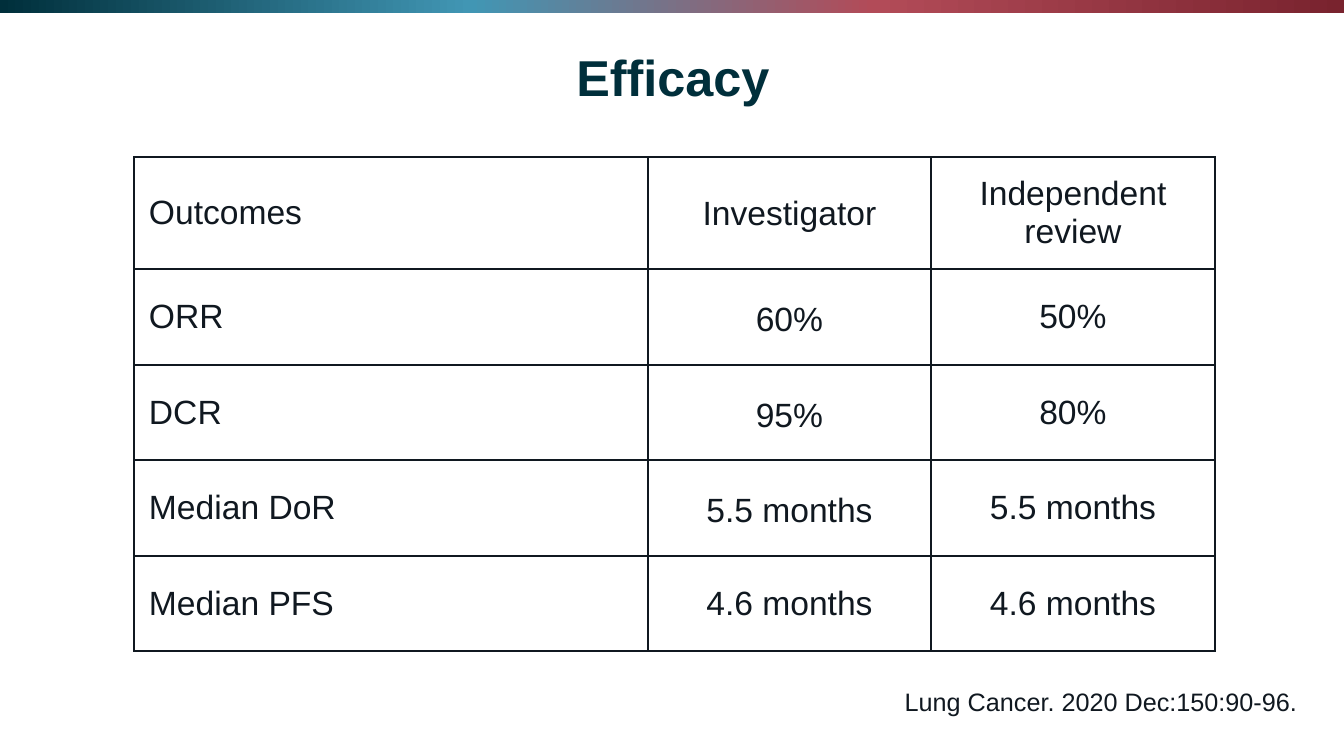
from lxml import etree
from pptx import Presentation
from pptx.dml.color import RGBColor
from pptx.enum.shapes import MSO_SHAPE
from pptx.enum.text import MSO_ANCHOR, PP_ALIGN
from pptx.oxml.ns import qn
from pptx.util import Emu, Pt

RECTANGLE = MSO_SHAPE.RECTANGLE
MIDDLE, TOP = MSO_ANCHOR.MIDDLE, MSO_ANCHOR.TOP
LEFT, CENTER, RIGHT = PP_ALIGN.LEFT, PP_ALIGN.CENTER, PP_ALIGN.RIGHT

EMU_PER_PX = 914400 / 100.8
FONT = "Arial"
COLORS = {
    "ink": "101820",
    "navy": "002F3B",
    "blue": "4196B4",
    "rose": "B24B58",
    "wine": "79232E",
}
BAND_STOPS = [(0, "wine"), (35, "rose"), (65, "blue"), (100, "navy")]

COLUMN_WIDTHS = [514, 283, 284]
ROW_HEIGHTS = [112, 96, 95, 96, 95]
OUTCOMES = [
    ("Outcomes", "Investigator", "Independent review"),
    ("ORR", "60%", "50%"),
    ("DCR", "95%", "80%"),
    ("Median DoR", "5.5 months", "5.5 months"),
    ("Median PFS", "4.6 months", "4.6 months"),
]
LOOSE_ROWS = (1, 2, 3)  # rows whose investigator value has wider line spacing


def px(length):
    return Emu(round(length * EMU_PER_PX))


def set_margins(holder, left, top, right, bottom):
    holder.margin_left, holder.margin_top = px(left), px(top)
    holder.margin_right, holder.margin_bottom = px(right), px(bottom)


def write(frame, text, size, color, align, bold=False, spacing=None):
    para = frame.paragraphs[0]
    para.text = text
    para.alignment = align
    para.line_spacing = spacing
    para.font.name = FONT
    para.font.size = Pt(size)
    para.font.bold = bold
    para.font.color.rgb = RGBColor.from_string(COLORS[color])


def add_gradient_band(page, left, top, width, height):
    band = page.shapes.add_shape(RECTANGLE, px(left), px(top), px(width), px(height))
    band.shadow.inherit = False
    band.line.fill.background()
    band.fill.gradient()
    band.fill.gradient_angle = 180
    stops = band._element.spPr.find(".//" + qn("a:gsLst"))
    for stop in list(stops):
        stops.remove(stop)
    for percent, color in BAND_STOPS:
        stop = etree.SubElement(stops, qn("a:gs"), pos=str(percent * 1000))
        etree.SubElement(stop, qn("a:srgbClr"), val=COLORS[color])


def add_text(page, left, top, width, height, text, size, color, align,
             anchor=TOP, margins=(10, 5, 10, 5), **style):
    box = page.shapes.add_textbox(px(left), px(top), px(width), px(height))
    frame = box.text_frame
    frame.word_wrap = True
    frame.vertical_anchor = anchor
    set_margins(frame, *margins)
    write(frame, text, size, color, align, **style)


def add_borders(cell, color, points):
    properties = cell._tc.get_or_add_tcPr()
    for side in ("lnL", "lnR", "lnT", "lnB"):
        line = etree.SubElement(properties, qn("a:" + side), w=str(Pt(points)))
        fill = etree.SubElement(line, qn("a:solidFill"))
        etree.SubElement(fill, qn("a:srgbClr"), val=COLORS[color])


def add_outcome_table(page, left, top):
    table = page.shapes.add_table(
        len(ROW_HEIGHTS), len(COLUMN_WIDTHS), px(left), px(top),
        px(sum(COLUMN_WIDTHS)), px(sum(ROW_HEIGHTS))).table
    table.first_row = False
    table.horz_banding = False
    for column, width in zip(table.columns, COLUMN_WIDTHS):
        column.width = px(width)
    for row, height in zip(table.rows, ROW_HEIGHTS):
        row.height = px(height)

    for r, values in enumerate(OUTCOMES):
        for c, value in enumerate(values):
            cell = table.cell(r, c)
            cell.vertical_anchor = MIDDLE
            # Labels are indented; the investigator column sits slightly lower
            set_margins(cell, 15 if c == 0 else 6, 1 if c == 1 else 0, 6, 0)
            spacing = 1.15 if c == 1 and r in LOOSE_ROWS else None
            write(cell.text_frame, value, 24, "ink",
                  LEFT if c == 0 else CENTER, spacing=spacing)
            add_borders(cell, "ink", 1.5)
            cell.fill.background()


def main():
    deck = Presentation()
    deck.slide_width, deck.slide_height = px(1344), px(756)
    page = deck.slides.add_slide(deck.slide_layouts[6])

    # Top band
    add_gradient_band(page, 0, 0, 1344, 13)

    # Outcomes
    add_outcome_table(page, 134, 157)

    # Title and citation
    add_text(page, 78, 40, 1190, 80, "Efficacy", 36, "navy", CENTER,
             anchor=MIDDLE, margins=(0, 0, 0, 0), bold=True, spacing=0.9)
    add_text(page, 761, 681, 546, 40, "Lung Cancer. 2020 Dec:150:90-96.",
             18, "ink", RIGHT)

    deck.save("out.pptx")


if __name__ == "__main__":
    main()
